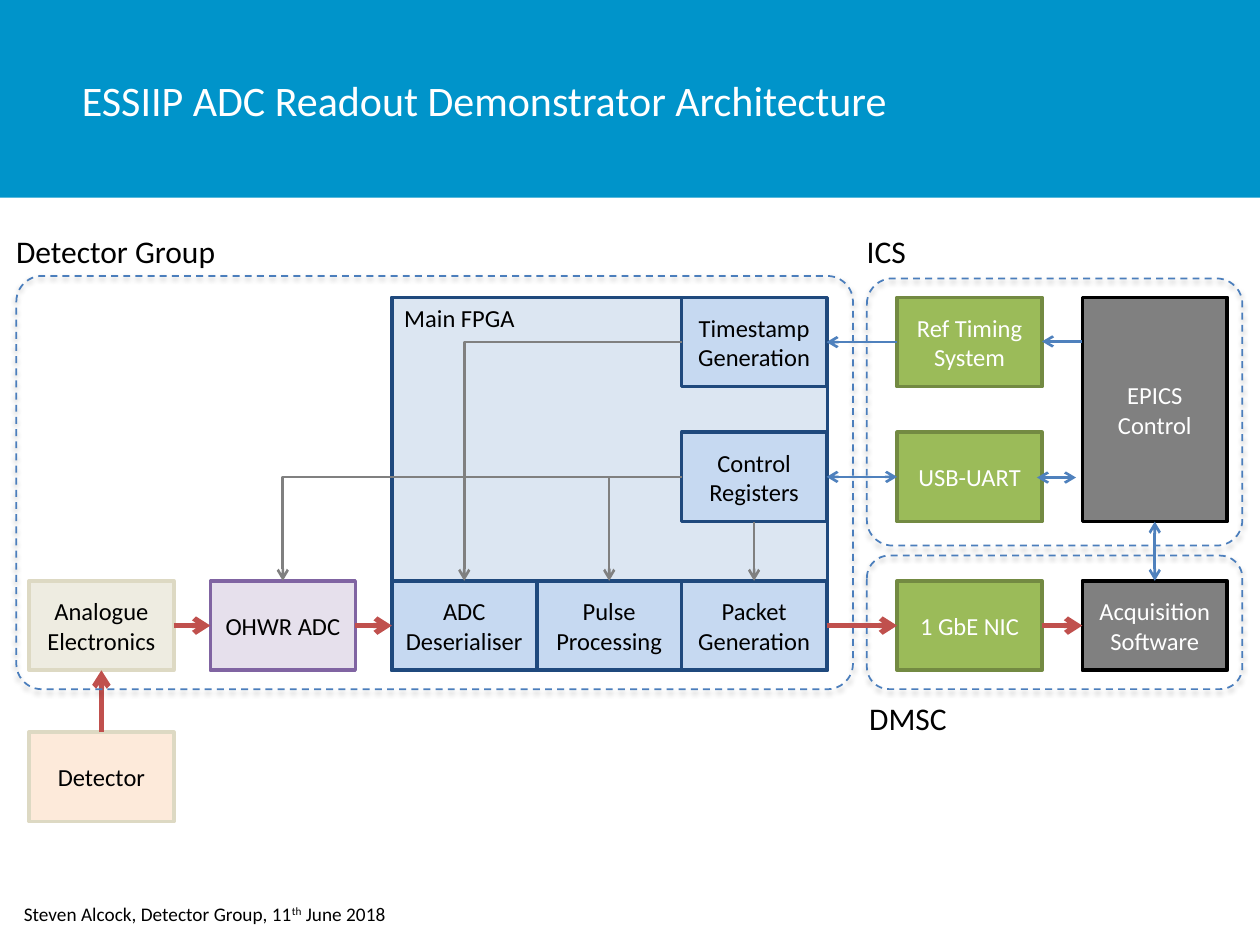
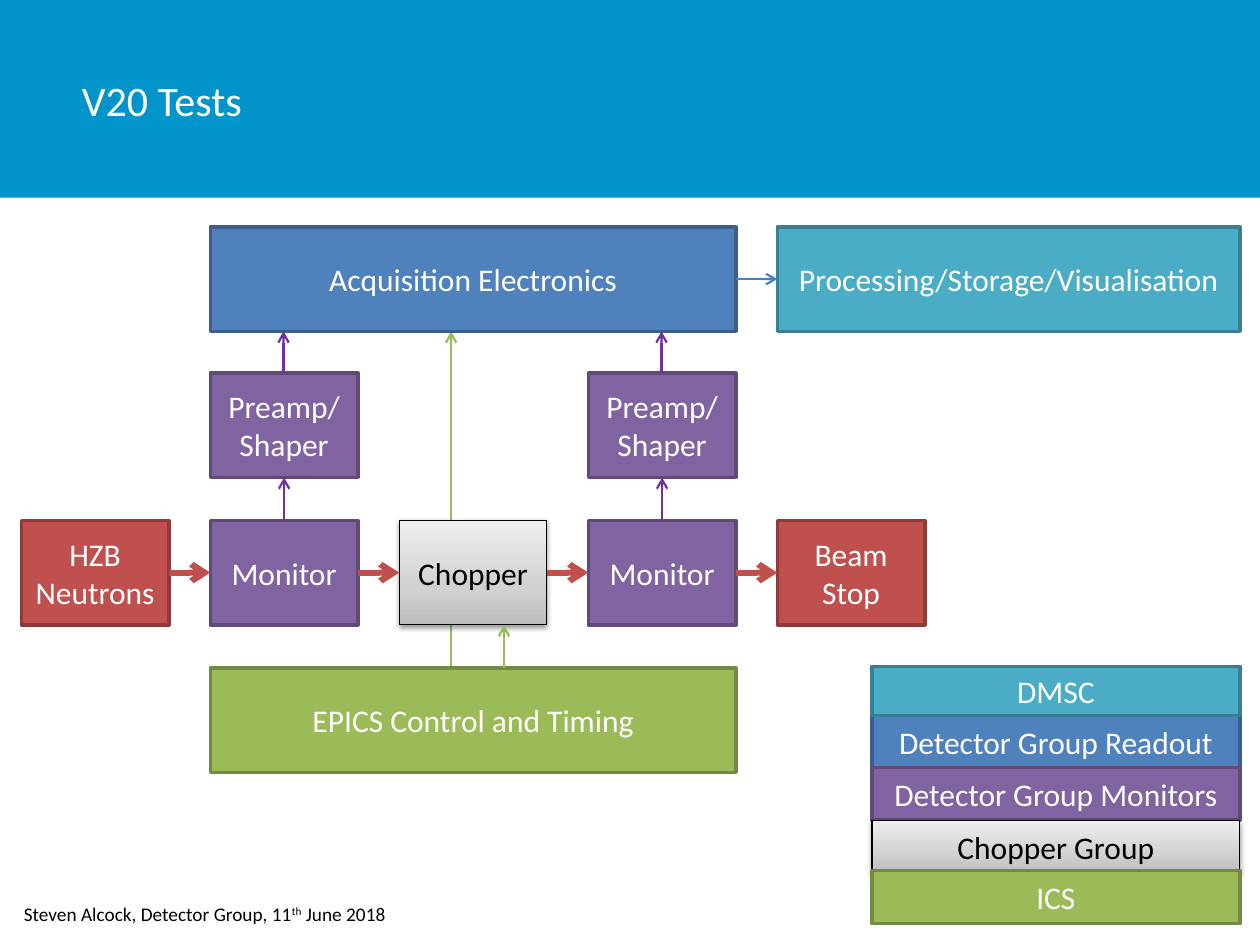
from dataclasses import dataclass

from pptx import Presentation
from pptx import util as u
from pptx.dml.color import RGBColor
from pptx.enum import dml, shapes, text
from pptx.oxml import parse_xml
from pptx.oxml.ns import nsdecls, qn

PX = 9144  # 100 px to the inch
TOP, LEFT, BASE, RIGHT = range(4)  # connection sites of a rectangle


@dataclass(frozen=True)
class Theme:
    font: str = "Calibri"
    head: int = 24
    label: int = 18
    cell: int = 14
    foot: int = 11
    band: str = "0094CA"
    white: str = "FFFFFF"
    black: str = "000000"
    dash: str = "4B7EBC"


T = Theme()

# Box looks: fill, outline, text colour
LOOKS = {
    "fpga": ("DCE6F2", "1F497D", T.black),
    "block": ("C6D9F1", "1F497D", T.black),
    "adc": ("E6E0EC", "8064A2", T.black),
    "analog": ("EEECE1", "DDD9C3", T.black),
    "source": ("FDEADA", "DDD9C3", T.black),
    "soft": ("808080", "000000", T.white),
    "green": ("9BBB59", "738A42", T.white),
    "violet": ("8064A2", "5F4A78", T.white),
    "blue": ("4F81BD", "3A5F8C", T.white),
    "teal": ("4BACC6", "377F92", T.white),
    "red": ("C0504D", "8E3B39", T.white),
    "metal": (None, "000000", T.black),
}
METAL = ((0, "BDBDBD"), (35, "D1D1D1"), (100, "EEEEEE"))

# Pens: colour, width in points
PENS = {
    "data": ("C0504D", 3),
    "beam": ("C0504D", 3.5),
    "ctrl": ("4F81BD", 1.5),
    "inner": ("808080", 1.5),
    "signal": ("7030A0", 1.25),
    "timing": ("9BBB59", 1.25),
    "out": ("4B7EBC", 1.25),
}


def rgb(code):
    return RGBColor.from_string(code)


def px(*nums):
    return [n * PX for n in nums]


def write(para, words, size, color, raised=False):
    run = para.add_run()
    run.text = words
    font = run.font
    font.name, font.size = T.font, u.Pt(size)
    font.color.rgb = rgb(color)
    if raised:
        font._element.set("baseline", "30000")


def shade(shape, alpha, dist):
    """Give the shape a soft shadow straight below it."""
    shape._element.spPr.find(qn("a:effectLst")).append(parse_xml(
        f'<a:outerShdw {nsdecls("a")} blurRad="40000" dist="{dist}" '
        f'dir="5400000" rotWithShape="0"><a:srgbClr val="000000">'
        f'<a:alpha val="{alpha}000"/></a:srgbClr></a:outerShdw>'))


def box(s, words, look, x, y, w, h, size=T.label):
    fill, edge, ink = LOOKS[look]
    shape = s.shapes.add_shape(shapes.MSO_SHAPE.RECTANGLE, *px(x, y, w, h))
    shape.shadow.inherit = False
    shape.line.color.rgb = rgb(edge)
    shape.line.width = u.Pt(2 if fill else 0.75)
    if fill:
        shape.fill.solid()
        shape.fill.fore_color.rgb = rgb(fill)
    else:
        stops = "".join(f'<a:gs pos="{p}000"><a:srgbClr val="{c}"/></a:gs>'
                        for p, c in METAL)
        shape._element.spPr.insert(2, parse_xml(
            f'<a:gradFill {nsdecls("a")} rotWithShape="1"><a:gsLst>{stops}'
            f'</a:gsLst><a:lin ang="16200000" scaled="0"/></a:gradFill>'))
        shade(shape, 38, 20000)
    frame = shape.text_frame
    frame.word_wrap = True
    frame.vertical_anchor = text.MSO_ANCHOR.MIDDLE
    for i, part in enumerate(words.split("\n")):
        para = frame.add_paragraph() if i else frame.paragraphs[0]
        para.alignment = text.PP_ALIGN.CENTER
        write(para, part, size, ink)
    return shape


def label(s, words, x, y, w):
    frame = s.shapes.add_textbox(*px(x, y, w, 40)).text_frame
    frame.word_wrap = False
    write(frame.paragraphs[0], words, T.label, T.black)


def zone(s, x, y, w, h, curve):
    shape = s.shapes.add_shape(shapes.MSO_SHAPE.ROUNDED_RECTANGLE,
                               *px(x, y, w, h))
    shape.adjustments[0] = curve
    shape.shadow.inherit = False
    shape.fill.background()
    shape.line.color.rgb = rgb(T.dash)
    shape.line.width = u.Pt(1)
    shape.line.dash_style = dml.MSO_LINE.DASH
    shade(shape, 35, 23000)


def arrow(s, x1, y1, x2, y2, pen, both=False, bent=False):
    kind = shapes.MSO_CONNECTOR.ELBOW if bent else shapes.MSO_CONNECTOR.STRAIGHT
    wire = s.shapes.add_connector(kind, *px(x1, y1, x2, y2))
    color, width = PENS[pen]
    wire.line.color.rgb = rgb(color)
    wire.line.width = u.Pt(width)
    props = wire._element.spPr
    for tag in ("headEnd", "tailEnd") if both else ("tailEnd",):
        props.find(qn("a:ln")).append(
            parse_xml(f'<a:{tag} {nsdecls("a")} type="arrow"/>'))
    props.append(parse_xml(f'<a:effectLst {nsdecls("a")}/>'))
    if bent:
        props.find(qn("a:prstGeom")).set("prst", "bentConnector2")
    return wire


def link(s, a, i, b, j, pen, both=False, bent=False):
    """Join site i of shape a to site j of shape b."""
    wire = arrow(s, 0, 0, 0, 0, pen, both, bent)
    wire.begin_connect(a, i)
    wire.end_connect(b, j)


def chain(s, row, pen):
    for a, b in zip(row, row[1:]):
        link(s, a, RIGHT, b, LEFT, pen)


def base(deck, title):
    """Start a slide with its title band and footer."""
    s = deck.slides.add_slide(deck.slide_layouts[6])
    band = s.shapes.add_shape(shapes.MSO_SHAPE.RECTANGLE, *px(0, 0, 1000, 157))
    band.shadow.inherit = False
    band.fill.solid()
    band.fill.fore_color.rgb = rgb(T.band)
    band.line.fill.background()

    frame = s.shapes.add_textbox(*px(65, 0, 704, 158)).text_frame
    frame.word_wrap = True
    frame.vertical_anchor = text.MSO_ANCHOR.MIDDLE
    frame.margin_left = frame.margin_right = 0
    frame.margin_top = frame.margin_bottom = 0
    write(frame.paragraphs[0], title, T.head, T.white)

    frame = s.shapes.add_textbox(*px(9, 711, 312, 29)).text_frame
    frame.word_wrap = False
    para = frame.paragraphs[0]
    write(para, "Steven Alcock, Detector Group, 11", T.foot, T.black)
    write(para, "th", T.foot, T.black, raised=True)
    write(para, " June 2018", T.foot, T.black)
    return s


def cell(s, words, look, x, y, h=71):
    return box(s, words, look, x, y, 115, h, T.cell)


def readout(s, x, y, w, h):
    """Detector Group zone: returns timestamp, control and packet blocks."""
    fpga = box(s, "Main FPGA", "fpga", x + 298, y + 17, 346, 296, T.cell)
    fpga.text_frame.vertical_anchor = text.MSO_ANCHOR.TOP
    fpga.text_frame.paragraphs[0].alignment = text.PP_ALIGN.LEFT
    low = y + 242
    front = cell(s, "Analogue Electronics", "analog", x + 10, low)
    adc = cell(s, "OHWR ADC", "adc", x + 154, low)
    names = ("ADC Deserialiser", "Pulse Processing", "Packet Generation")
    ser, pulse, pack = [cell(s, name, "block", x + 298 + 115 * i, low)
                        for i, name in enumerate(names)]
    stamp = cell(s, "Timestamp Generation", "block", x + 528, y + 17)
    ctrl = cell(s, "Control Registers", "block", x + 528, y + 124)
    source = cell(s, "Detector", "source", x + 10, y + 362)

    chain(s, (front, adc, ser), "data")
    link(s, source, TOP, front, BASE, "data")
    for a, b in ((stamp, ser), (ctrl, adc), (ctrl, pulse)):
        link(s, a, LEFT, b, TOP, "inner", bent=True)
    link(s, ctrl, BASE, pack, TOP, "inner")
    zone(s, x, y, w, h, 0.062)
    label(s, "Detector Group", x - 10, y - 40, 180)
    return stamp, ctrl, pack


def control(s, x, y, w, h):
    """ICS zone: returns timing, serial and control boxes."""
    timing = cell(s, "Ref Timing System", "green", x + 24, y + 15)
    uart = cell(s, "USB-UART", "green", x + 24, y + 122)
    epics = cell(s, "EPICS Control", "soft", x + 171, y + 15, 178)
    arrow(s, x + 171, y + 50, x + 139, y + 50, "ctrl")
    arrow(s, x + 135, y + 158, x + 166, y + 158, "ctrl", both=True)
    zone(s, x, y, w, h, 0.096)
    label(s, "ICS", x - 10, y - 42, 52)
    return timing, uart, epics


def store(s, x, y, w, h):
    """DMSC zone: returns network and software boxes."""
    nic = cell(s, "1 GbE NIC", "green", x + 24, y + 20)
    soft = cell(s, "Acquisition Software", "soft", x + 171, y + 20)
    chain(s, (nic, soft), "data")
    zone(s, x, y, w, h, 0.167)
    label(s, "DMSC", x - 8, y + 109, 82)
    return nic, soft


def layout(deck):
    s = base(deck, "ESSIIP ADC Readout Demonstrator Architecture")
    stamp, ctrl, pack = readout(s, 13, 219, 664, 328)
    timing, uart, epics = control(s, 688, 221, 298, 212)
    nic, soft = store(s, 688, 441, 298, 106)
    # Links between zones
    link(s, pack, RIGHT, nic, LEFT, "data")
    link(s, timing, LEFT, stamp, RIGHT, "ctrl")
    link(s, ctrl, RIGHT, uart, LEFT, "ctrl", both=True)
    link(s, epics, BASE, soft, TOP, "ctrl", both=True)


def beam(s, x, y):
    """Beam line with its monitors, readout above and control below."""
    step, wide, tall = 150, 117, 83
    rise = 117
    mid = x + step
    span = 2 * step + wide
    # Timing line, behind the chopper
    arrow(s, x + 341, y + rise, x + 341, y - 150, "timing")
    stops = (("HZB Neutrons", "red"), ("Monitor", "violet"),
             ("Chopper", "metal"), ("Monitor", "violet"), ("Beam Stop", "red"))
    row = [box(s, name, look, x + step * i, y, wide, tall)
           for i, (name, look) in enumerate(stops)]
    chain(s, row, "beam")

    top = y - 2 * rise + 1
    acq = box(s, "Acquisition Electronics", "blue", mid, top, span, tall)
    view = box(s, "Processing/Storage/Visualisation", "teal",
               x + 4 * step, top, 367, tall)
    chain(s, (acq, view), "out")
    for i in (1, 3):
        left = x + step * i
        amp = box(s, "Preamp/\nShaper", "violet", left, y - rise, wide, tall)
        link(s, row[i], TOP, amp, BASE, "signal")
        arrow(s, left + 58, y - rise, left + 58, top + tall, "signal")
    box(s, "EPICS Control and Timing", "green", mid, y + rise, span, tall)
    arrow(s, x + 383, y + rise, x + 383, y + tall, "timing")


def legend(s, x, y, w):
    rows = (("Detector Group Readout", "blue", 39, 42),
            ("Detector Group Monitors", "violet", 80, 42),
            ("DMSC", "teal", 0, 39),
            ("Chopper Group", "metal", 122, 42),
            ("ICS", "green", 162, 42))
    for name, look, drop, h in rows:
        box(s, name, look, x, y + drop, w, h)


def tests(deck):
    s = base(deck, "V20 Tests")
    beam(s, 17, 413)
    legend(s, 692, 529, 292)


def main():
    deck = Presentation()
    deck.slide_width, deck.slide_height = px(1000, 750)
    layout(deck)
    tests(deck)
    deck.save("out.pptx")


if __name__ == "__main__":
    main()
